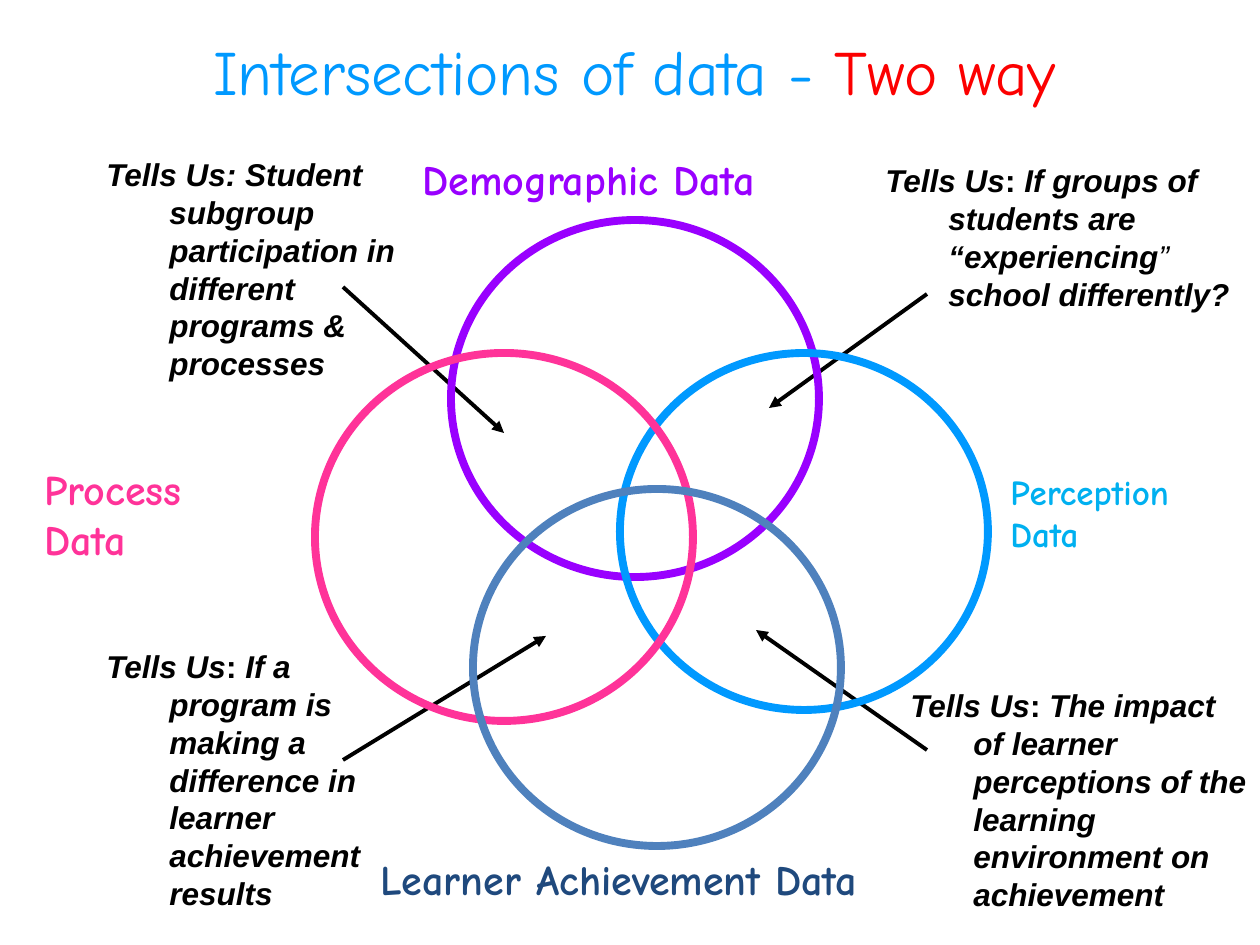
import pptx
import pptx.dml.color
import pptx.enum.shapes
import pptx.enum.text
import pptx.oxml.ns
import pptx.util
from lxml import etree

RGBColor = pptx.dml.color.RGBColor
BLACK = RGBColor(0x00, 0x00, 0x00)
RED = RGBColor(0xFC, 0x00, 0x00)
SKY = RGBColor(0x00, 0x99, 0xFF)
CYAN = RGBColor(0x00, 0xB0, 0xF0)
PURPLE = RGBColor(0x99, 0x00, 0xFF)
PINK = RGBColor(0xFF, 0x33, 0x99)
STEEL = RGBColor(0x4F, 0x81, 0xBD)
NAVY = RGBColor(0x1F, 0x49, 0x7D)
HEADING_FONT = "Comic Neue"
NOTE_FONT = "Arial"
EMU_PER_PX = 914400 / 126


def px(*lengths):
    """Turn pixel lengths into a list of EMU values."""
    return [round(length * EMU_PER_PX) for length in lengths]


def add_run(paragraph, text, font_name, size, color, bold=True, italic=False):
    run = paragraph.add_run()
    run.text = text
    run.font.name = font_name
    run.font.size = pptx.util.Pt(size)
    run.font.color.rgb = color
    run.font.bold = bold
    run.font.italic = italic


presentation = pptx.Presentation()
presentation.slide_width, presentation.slide_height = px(1260, 945)
slide = presentation.slides.add_slide(presentation.slide_layouts[5])

# Title
title = slide.shapes.title
title.left, title.top, title.width, title.height = px(74, 26, 1121, 88)
title.text_frame.vertical_anchor = pptx.enum.text.MSO_ANCHOR.MIDDLE
title_paragraph = title.text_frame.paragraphs[0]
title_paragraph.alignment = pptx.enum.text.PP_ALIGN.CENTER
add_run(title_paragraph, "Intersections of data - ", HEADING_FONT, 36, SKY, bold=False)
add_run(title_paragraph, "Two way", HEADING_FONT, 36, RED, bold=False)

# Notes with hanging indent: box, then runs of (text, bold, italic)
lead = [("Tells Us", True, True), (": ", True, False)]
notes = [
    ((873, 155, 387, 164), lead + [
        ("If groups of students are “experiencing", True, True),
        ("” ", False, True),
        ("school differently?", True, True)]),
    ((898, 680, 362, 239), lead + [
        ("The impact of learner perceptions of the learning environment "
         "on achievement", True, True)]),
    ((94, 149, 347, 239), [
        ("Tells Us: Student subgroup participation in different programs "
         "& processes", True, True)]),
    ((94, 641, 297, 277), lead + [
        ("If a program is making a difference in learner achievement "
         "results", True, True)]),
]
for box, runs in notes:
    note = slide.shapes.add_textbox(*px(*box))
    note.text_frame.word_wrap = True
    paragraph = note.text_frame.paragraphs[0]
    indent = px(63)[0]
    properties = paragraph._p.get_or_add_pPr()
    properties.set("marL", str(indent))
    properties.set("indent", str(-indent))
    for text, bold, italic in runs:
        add_run(paragraph, text, NOTE_FONT, 18, BLACK, bold, italic)

# Arrows from each note into an intersection
for ends in [(927, 294, 769, 408), (927, 750, 756, 630),
             (343, 287, 504, 433), (343, 760, 546, 636)]:
    arrow = slide.shapes.add_connector(
        pptx.enum.shapes.MSO_CONNECTOR.STRAIGHT, *px(*ends))
    arrow.line.color.rgb = BLACK
    arrow.line.width = pptx.util.Pt(2.25)
    etree.SubElement(arrow.line._get_or_add_ln(),
                     pptx.oxml.ns.qn("a:tailEnd"), type="triangle")
    etree.SubElement(arrow._element.spPr, pptx.oxml.ns.qn("a:effectLst"))

# Circles of the diagram
for box, color in [((451, 220, 368, 357), PURPLE), ((620, 353, 368, 357), SKY),
                   ((315, 353, 378, 368), PINK), ((473, 489, 368, 357), STEEL)]:
    circle = slide.shapes.add_shape(
        pptx.enum.shapes.MSO_SHAPE.OVAL, *px(*box))
    circle.shadow.inherit = False
    circle.fill.background()
    circle.line.color.rgb = color
    circle.line.width = pptx.util.Pt(4.5)

# Circle labels
labels = [
    ((410, 147, 451, 63), ["Demographic Data"], 24, PURPLE, True),
    ((32, 457, 378, 115), ["Process", "Data"], 24, PINK, True),
    ((368, 847, 620, 63), ["Learner Achievement Data"], 24, NAVY, True),
    ((998, 464, 228, 97), ["Perception", "Data"], 20, CYAN, False),
]
for box, lines, size, color, wrap in labels:
    label = slide.shapes.add_textbox(*px(*box))
    label.text_frame.word_wrap = wrap
    for index, line in enumerate(lines):
        paragraph = (label.text_frame.add_paragraph() if index
                     else label.text_frame.paragraphs[0])
        add_run(paragraph, line, HEADING_FONT, size, color)

presentation.save("out.pptx")
